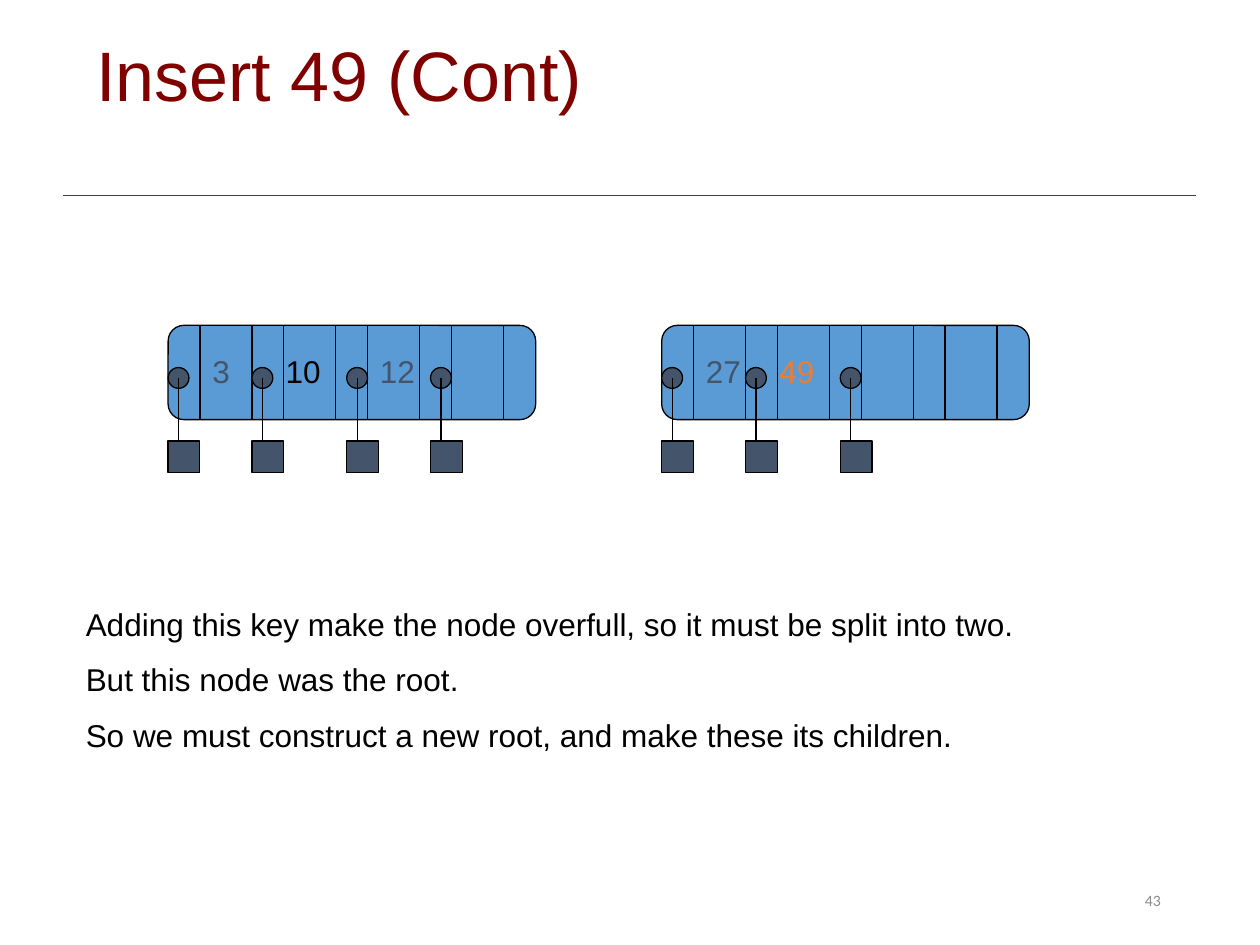
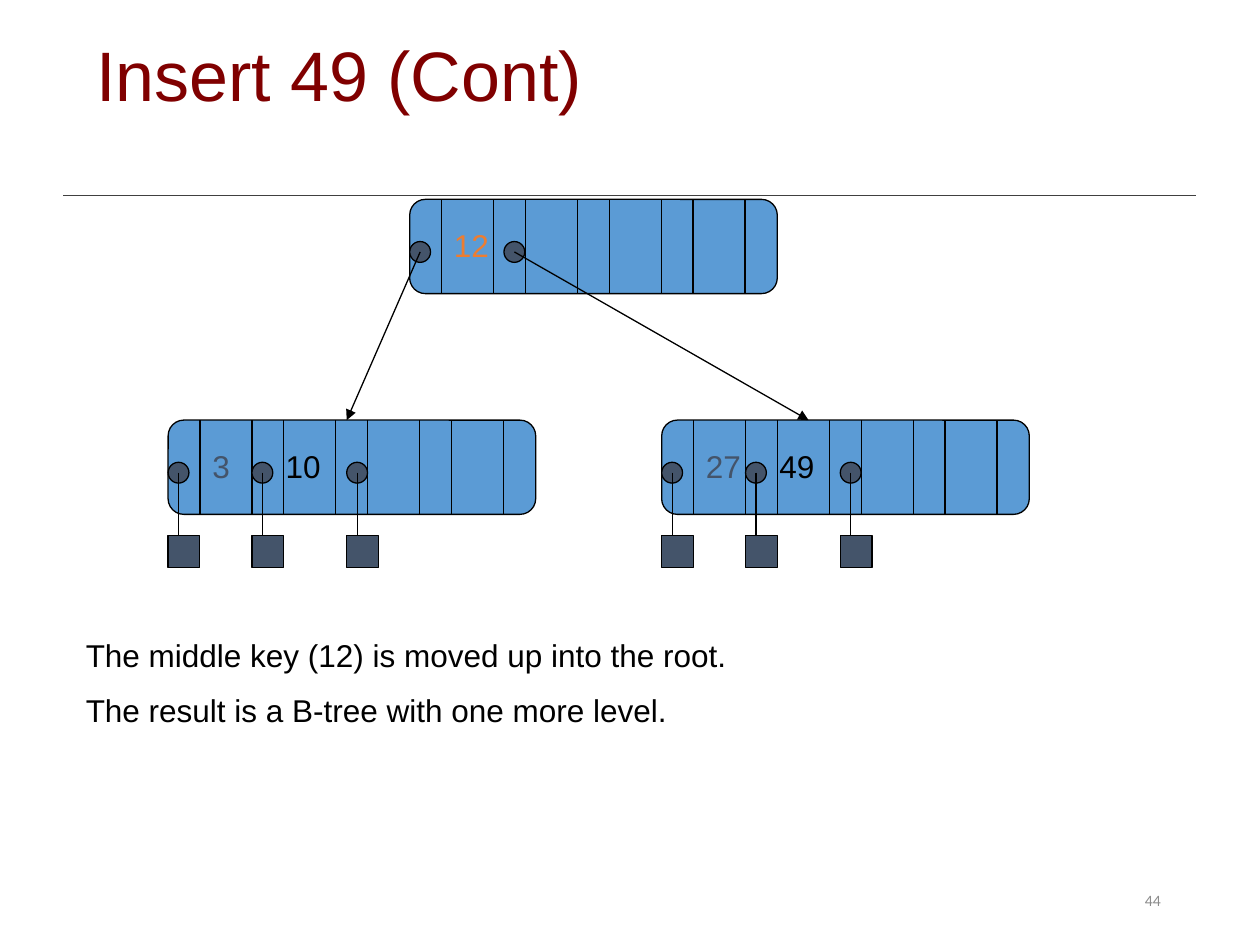
import pptx
import pptx.dml.color
import pptx.enum.shapes
import pptx.enum.text
import pptx.oxml.ns
import pptx.util
from lxml import etree

Cm = pptx.util.Cm
Pt = pptx.util.Pt
SHAPE = pptx.enum.shapes.MSO_SHAPE
ALIGN = pptx.enum.text.PP_ALIGN
ANCHOR = pptx.enum.text.MSO_ANCHOR

COLOURS = {
    "title": "800000",
    "rule": "404040",
    "page": "8C8C8C",
    "ink": "000000",
    "node": "5B9BD5",
    "slate": "44546A",
    "new": "ED7D31",
}
NODE_WIDTH, NODE_HEIGHT = 7.41, 1.9
PITCH, POINTER_WIDTH = 1.69, 0.64
POINTERS_PER_NODE = 5
DOT, DOT_DROP = 0.42, 0.85
LEAF, LEAF_DROP = 0.64, 2.33
KEY_OFFSETS = (0.64, 2.12, 4.02)
LEAF_POINTERS = (0, 1.69, 3.6, 5.29)
ROOT_POINTERS = (0, 1.9)
LEFT_NODE, ROOT_NODE, RIGHT_NODE = 3.39, 8.26, 13.34


def rgb(name):
    """Return the named colour."""
    return pptx.dml.color.RGBColor.from_string(COLOURS[name])


def add_text(slide, box, lines, size, colour, font="Arial", align=ALIGN.LEFT,
             anchor=ANCHOR.TOP, wrap=True, before=0, spacing=None):
    """Add a text box with one paragraph for each line."""
    frame = slide.shapes.add_textbox(*map(Cm, box)).text_frame
    frame.word_wrap = wrap
    frame.vertical_anchor = anchor
    for index, line in enumerate(lines):
        paragraph = frame.add_paragraph() if index else frame.paragraphs[0]
        paragraph.alignment = align
        paragraph.line_spacing = spacing
        paragraph.space_before = Pt(before if index else 0)
        run = paragraph.add_run()
        run.text = line
        run.font.name = font
        run.font.size = Pt(size)
        run.font.color.rgb = rgb(colour)
    return frame


def add_line(slide, start, end, colour="ink", width=0.75, arrow=False):
    """Draw a straight line, with an arrowhead at its end if asked."""
    line = slide.shapes.add_connector(
        pptx.enum.shapes.MSO_CONNECTOR.STRAIGHT, *map(Cm, (*start, *end)))
    line.line.color.rgb = rgb(colour)
    line.line.width = Pt(width)
    properties = line._element.spPr
    if arrow:
        outline = properties.find(pptx.oxml.ns.qn("a:ln"))
        etree.SubElement(outline, pptx.oxml.ns.qn("a:tailEnd"), type="triangle")
    etree.SubElement(properties, pptx.oxml.ns.qn("a:effectLst"))


def add_block(slide, kind, box, colour):
    """Draw a filled shape with a thin black outline."""
    block = slide.shapes.add_shape(kind, *map(Cm, box))
    block.shadow.inherit = False
    block.fill.solid()
    block.fill.fore_color.rgb = rgb(colour)
    block.line.color.rgb = rgb("ink")
    block.line.width = Pt(0.75)


def add_node(slide, left, top, keys):
    """Draw a B-tree node with its pointer cells and (key, colour) pairs."""
    add_block(slide, SHAPE.ROUNDED_RECTANGLE,
              (left, top, NODE_WIDTH, NODE_HEIGHT), "node")
    for cell in range(POINTERS_PER_NODE):
        pointer_left = left + cell * PITCH
        edges = [pointer_left, pointer_left + POINTER_WIDTH]
        if cell == 0:
            edges = edges[1:]
        elif cell == POINTERS_PER_NODE - 1:
            edges = edges[:1]
        for x in edges:
            add_line(slide, (x, top), (x, top + NODE_HEIGHT))
    for offset, (key, colour) in zip(KEY_OFFSETS, keys):
        width = 0.91 if len(key) == 1 else 1.3
        label = add_text(slide, (left + offset, top + 0.42, width, 1.09),
                         [key], 18, colour, wrap=False)
        label.auto_size = pptx.enum.text.MSO_AUTO_SIZE.SHAPE_TO_FIT_TEXT


def add_pointer(slide, left, top, target):
    """Draw a pointer dot in a node at this top and an arrow to its target."""
    add_block(slide, SHAPE.OVAL, (left, top + DOT_DROP, DOT, DOT), "slate")
    centre = (left + DOT / 2, top + DOT_DROP + DOT / 2)
    add_line(slide, centre, target, arrow=True)


def add_leaf_node(slide, left, top, keys):
    """Draw a node whose pointers all lead to empty leaves."""
    add_node(slide, left, top, keys)
    for offset in LEAF_POINTERS[:len(keys) + 1]:
        x = left + offset
        add_pointer(slide, x, top, (x + DOT / 2, top + LEAF_DROP + DOT))
        add_block(slide, SHAPE.RECTANGLE, (x, top + LEAF_DROP, LEAF, LEAF), "slate")


def add_root(slide, left, top, keys, targets):
    """Draw the root node with arrows to its children."""
    add_node(slide, left, top, keys)
    for offset, target in zip(ROOT_POINTERS, targets):
        add_pointer(slide, left + offset, top, target)


def add_explanation(slide, top, height, lines):
    """Write the explanation below the tree."""
    add_text(slide, (1.48, top, 23.07, height), lines, 18, "ink", before=10)


def start_slide(deck, title, number):
    """Add a blank slide with the shared title, rule and page number."""
    slide = deck.slides.add_slide(deck.slide_layouts[6])
    add_line(slide, (1.27, 3.94), (24.1, 3.94), "rule", 1)
    add_text(slide, (17.94, 17.65, 5.71, 1.01), [str(number)], 9, "page",
             font="Calibri", align=ALIGN.RIGHT, anchor=ANCHOR.MIDDLE)
    add_text(slide, (1.69, 0.42, 21.59, 2.33), [title], 40, "title",
             anchor=ANCHOR.MIDDLE, spacing=0.9)
    return slide


def main():
    """Build both slides and save the deck."""
    deck = pptx.Presentation()
    deck.slide_width, deck.slide_height = Cm(25.4), Cm(19.05)
    title = "Insert 49 (Cont)"

    split = start_slide(deck, title, 43)
    split_top = 6.56
    add_leaf_node(split, LEFT_NODE, split_top,
                  [("3", "slate"), ("10", "ink"), ("12", "slate")])
    add_leaf_node(split, RIGHT_NODE, split_top, [("27", "slate"), ("49", "new")])
    add_explanation(split, 12.07, 3.63, [
        "Adding this key make the node overfull, so it must be split into two.",
        "But this node was the root.",
        "So we must construct a new root, and make these its children.",
    ])

    grown = start_slide(deck, title, 44)
    child_top = 8.47
    add_leaf_node(grown, LEFT_NODE, child_top, [("3", "slate"), ("10", "ink")])
    add_leaf_node(grown, RIGHT_NODE, child_top, [("27", "slate"), ("49", "ink")])
    add_root(grown, ROOT_NODE, 4.02, [("12", "new")],
             [(6.99, child_top), (16.3, child_top)])
    add_explanation(grown, 12.7, 2.36, [
        "The middle key (12) is moved up into the root.",
        "The result is a B-tree with one more level.",
    ])

    deck.save("out.pptx")


if __name__ == "__main__":
    main()
